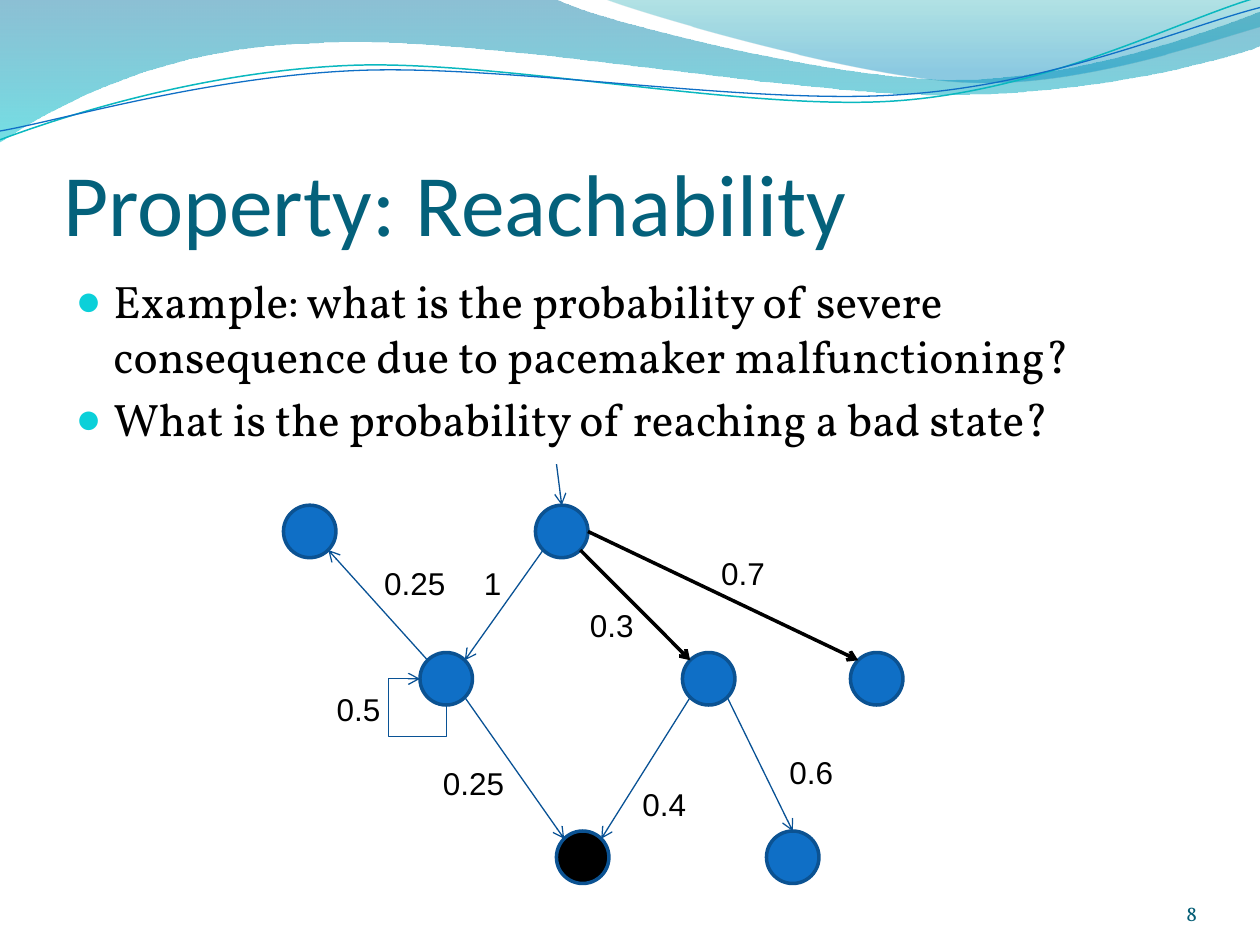
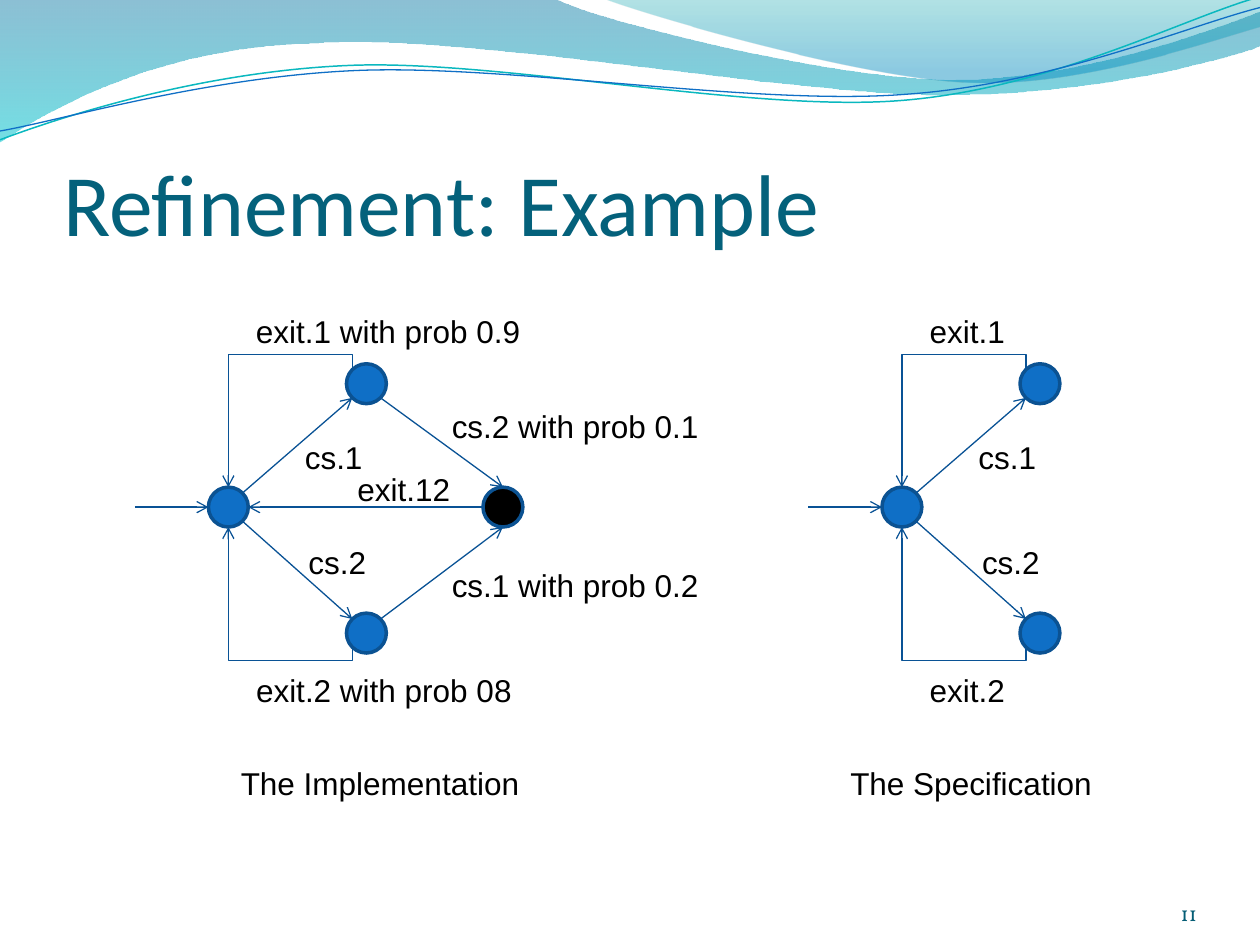
import math

from lxml import etree
from pptx import Presentation
from pptx.dml.color import RGBColor
from pptx.enum.shapes import MSO_CONNECTOR, MSO_SHAPE
from pptx.enum.text import MSO_ANCHOR, MSO_AUTO_SIZE, PP_ALIGN
from pptx.oxml.ns import qn
from pptx.util import Inches, Pt

STRAIGHT, ELBOW = MSO_CONNECTOR.STRAIGHT, MSO_CONNECTOR.ELBOW
OVAL = MSO_SHAPE.OVAL
BOTTOM = MSO_ANCHOR.BOTTOM
LEFT_ALIGNED, RIGHT_ALIGNED = PP_ALIGN.LEFT, PP_ALIGN.RIGHT
GROW = MSO_AUTO_SIZE.SHAPE_TO_FIT_TEXT

COLORS = {
    "title": "04617B", "number": "045D75", "text": "000000", "bullet": "0BD0D9",
    "state": "0F6FC6", "state edge": "0B5292", "bad": "000000",
    "arrow": "095295", "choice": "000000",
    "teal line": "0AB8BF", "blue line": "0F6FC6",
    "deep blue": "0074A1", "turquoise": "00C6CF", "sea": "00A1A9", "sky": "008BBF",
}
TITLE = {"name": "Calibri", "size": Pt(50), "color": "title"}
BODY = {"name": "Vollkorn", "size": Pt(26), "color": "text"}
NUMBER = {"name": "Vollkorn", "size": Pt(12), "color": "number"}
LABEL = {"name": "Arial", "size": Pt(18), "color": "text"}

# The slide is a grid of 120 columns by 90 rows
CELL = Inches(10) // 120

# Connection sites of a circle, counter-clockwise from the top
TOP, TOP_LEFT, LEFT, BOTTOM_LEFT, DOWN, BOTTOM_RIGHT, RIGHT, TOP_RIGHT = range(8)

# Waves in inches: a start point, then straight (2) or curved (6) segments
BROAD_WAVE = [
    (0, 0), (4.4, -0.01), (4.76, 0.17, 6.64, 0.63, 7.58, 0.63),
    (8.53, 0.63, 9.58, 0.26, 10, 0.09), (10.01, 0.36),
    (9.83, 0.44, 8.7, 0.76, 7.46, 0.75), (6.22, 0.75, 3.82, 0.28, 2.57, 0.34),
    (1.29, 0.36, 0.46, 0.83, -0.01, 1.13), (0, 0)]
RIGHT_WAVE = [
    (4.79, -0.01), (5.09, 0.11, 6.82, 0.62, 7.69, 0.65),
    (8.56, 0.69, 9.61, 0.32, 10, 0.21), (10, 0), (4.79, -0.01)]
TEAL_CURVE = [
    (0, 1.11), (0.48, 0.93, 1.58, 0.57, 2.77, 0.52),
    (3.95, 0.47, 5.93, 0.89, 7.13, 0.8), (8.33, 0.71, 9.38, 0.15, 9.98, -0.02)]
BLUE_CURVE = [
    (0, 1.04), (0.47, 0.96, 1.64, 0.61, 2.83, 0.56),
    (4.03, 0.51, 5.97, 0.84, 7.17, 0.75), (8.36, 0.67, 9.41, 0.21, 10, 0.06)]


def rgb(name):
    return RGBColor.from_string(COLORS[name])


def cells(*values):
    return [round(value * CELL) for value in values]


def add_xml(parent, tag, **attributes):
    values = {key: str(value) for key, value in attributes.items()}
    return etree.SubElement(parent, qn(tag), values)


def write(paragraph, text, style, align=LEFT_ALIGNED):
    paragraph.alignment = align
    run = paragraph.add_run()
    run.text = text
    for key, value in style.items():
        if key == "color":
            run.font.color.rgb = rgb(value)
        else:
            setattr(run.font, key, value)


def set_frame(frame, **settings):
    for key, value in settings.items():
        setattr(frame, key, value)


def place(shape, left, top, width, height):
    shape.left, shape.top, shape.width, shape.height = cells(left, top, width, height)


# ---- Wave band, kept on the master ----

def add_curve(slide, segments, close):
    """Freeform through all points, whose triples then become Bézier curves."""
    flat = [Inches(value) for segment in segments for value in segment]
    start, *rest = zip(flat[::2], flat[1::2])
    builder = slide.shapes.build_freeform(*start, scale=1.0)
    builder.add_line_segments(rest, close=close)
    curve = builder.convert_to_shape()
    curve.shadow.inherit = False
    steps = iter(list(curve.element.spPr.iter(qn("a:lnTo"))))
    for segment in segments[1:]:
        step = next(steps)
        if len(segment) == 6:
            step.tag = qn("a:cubicBezTo")
            for control in (next(steps), next(steps)):
                step.append(control[0])
                control.getparent().remove(control)
    return curve


def add_wave(slide, segments, stops):
    wave = add_curve(slide, segments, close=True)
    wave.line.fill.background()
    wave.fill.gradient()
    wave.fill.gradient_angle = 270
    for stop, (position, color, _) in zip(wave.fill.gradient_stops, stops):
        stop.position = position
        stop.color.rgb = rgb(color)
    colors = wave.element.spPr.iter(qn("a:srgbClr"))
    for color, (_, _, opacity) in zip(colors, stops):
        add_xml(color, "a:alpha", val=opacity * 1000)
    return wave


def add_thin_curve(slide, segments, color, width):
    curve = add_curve(slide, segments, close=False)
    curve.fill.background()
    curve.line.color.rgb = rgb(color)
    curve.line.width = Pt(width)
    return curve


def add_master_band(master, slide):
    band = [
        add_wave(slide, BROAD_WAVE, [(0, "deep blue", 45), (1, "turquoise", 55)]),
        add_wave(slide, RIGHT_WAVE, [(0, "sea", 30), (0.8, "sky", 45)]),
        add_thin_curve(slide, TEAL_CURVE, "teal line", 0.85),
        add_thin_curve(slide, BLUE_CURVE, "blue line", 0.75),
    ]
    for index, part in enumerate(band, start=2):
        master.shapes.element.insert(index, part.element)


# ---- Text ----

def add_slide(prs, layout_index, title, number):
    slide = prs.slides.add_slide(prs.slide_layouts[layout_index])
    heading = slide.shapes.title
    place(heading, 6, 9.24, 108, 15)
    set_frame(heading.text_frame, vertical_anchor=BOTTOM, margin_left=0,
              margin_right=0, margin_top=Inches(0.05), margin_bottom=0)
    write(heading.text_frame.paragraphs[0], title, TITLE)

    page = slide.shapes.add_textbox(*cells(104, 83.4, 10, 4.8)).text_frame
    set_frame(page, word_wrap=True, vertical_anchor=BOTTOM, margin_left=0,
              margin_right=0, margin_top=0, margin_bottom=0)
    write(page.paragraphs[0], number, NUMBER, RIGHT_ALIGNED)
    return slide


def add_bullets(slide, questions):
    body = slide.placeholders[1]
    place(body, 6, 25.4, 108, 57.6)
    for index, question in enumerate(questions):
        frame = body.text_frame
        paragraph = frame.add_paragraph() if index else frame.paragraphs[0]
        write(paragraph, question, BODY)
        properties = paragraph._p.get_or_add_pPr()
        properties.set("marL", str(Inches(0.3)))
        properties.set("indent", str(-Inches(0.3)))
        add_xml(add_xml(properties, "a:buClr"), "a:srgbClr", val=COLORS["bullet"])
        add_xml(properties, "a:buSzPct", val=95000)
        add_xml(properties, "a:buChar", char="●")


def add_label(slide, text, left, top, width, wrap=False):
    frame = slide.shapes.add_textbox(*cells(left, top, width, 4.8)).text_frame
    set_frame(frame, word_wrap=wrap, auto_size=GROW)
    write(frame.paragraphs[0], text, LABEL)


# ---- States and transitions ----

def add_state(slide, center_x, center_y, size, fill="state"):
    state = slide.shapes.add_shape(
        OVAL, *cells(center_x - size / 2, center_y - size / 2, size, size))
    state.shadow.inherit = False
    state.fill.solid()
    state.fill.fore_color.rgb = rgb(fill)
    state.line.color.rgb = rgb("state edge")
    state.line.width = Pt(2)
    return state


def site_point(state, site):
    angle = math.radians(90 + 45 * site)
    return (round(state.left + state.width / 2 * (1 + math.cos(angle))),
            round(state.top + state.height / 2 * (1 - math.sin(angle))))


def add_arrow(slide, start, end, kind=STRAIGHT, color="arrow", width=0.75):
    arrow = slide.shapes.add_connector(kind, *start, *end)
    arrow.line.color.rgb = rgb(color)
    arrow.line.width = Pt(width)
    properties = arrow.element.spPr
    add_xml(properties.find(qn("a:ln")), "a:tailEnd", type="arrow")
    add_xml(properties, "a:effectLst")
    return arrow


def add_transition(slide, source, source_site, target, target_site, **look):
    arrow = add_arrow(slide, site_point(source, source_site),
                      site_point(target, target_site), **look)
    joints = arrow.element.nvCxnSpPr.cNvCxnSpPr
    add_xml(joints, "a:stCxn", id=source.shape_id, idx=source_site)
    add_xml(joints, "a:endCxn", id=target.shape_id, idx=target_site)


def add_bent_transition(slide, start, end, turn, flips, bends):
    """Elbow arrow whose box is turned a quarter about the middle of its ends."""
    (x1, y1), (x2, y2) = start, end
    arrow = add_arrow(slide, start, end, kind=ELBOW)
    width, height = abs(y2 - y1), abs(x2 - x1)
    arrow.left, arrow.top = (x1 + x2 - width) // 2, (y1 + y2 - height) // 2
    arrow.width, arrow.height = width, height
    frame = arrow.element.spPr.find(qn("a:xfrm"))
    for axis in ("flipH", "flipV"):
        frame.set(axis, "1" if axis in flips else "0")
    frame.set("rot", str(turn * 60000))
    geometry = arrow.element.spPr.find(qn("a:prstGeom"))
    geometry.set("prst", f"bentConnector{len(bends) + 2}")
    guides = geometry.find(qn("a:avLst"))
    for index, bend in enumerate(bends, start=1):
        add_xml(guides, "a:gd", name=f"adj{index}", fmla=f"val {round(bend * 100000)}")


# ---- Diagrams ----

def draw_reachability(slide):
    upper, middle, lower, size = 50.62, 64.65, 81.65, 5
    start = add_state(slide, 53.5, upper, size)
    done = add_state(slide, 29.5, upper, size)
    looping = add_state(slide, 42.5, middle, size)
    risky = add_state(slide, 67.5, middle, size)
    safe = add_state(slide, 83.5, middle, size)
    bad = add_state(slide, 55.5, lower, size, "bad")
    recovered = add_state(slide, 75.5, lower, size)

    add_arrow(slide, cells(53, 44.2), site_point(start, TOP))
    for source, leaving, target, entering in [
            (start, BOTTOM_LEFT, looping, TOP_RIGHT),
            (looping, TOP_LEFT, done, BOTTOM_RIGHT),
            (looping, BOTTOM_RIGHT, bad, TOP_LEFT),
            (risky, BOTTOM_LEFT, bad, TOP_RIGHT),
            (risky, BOTTOM_RIGHT, recovered, TOP)]:
        add_transition(slide, source, leaving, target, entering)
    for leaving, target in [(RIGHT, safe), (BOTTOM_RIGHT, risky)]:
        add_transition(slide, start, leaving, target, TOP_LEFT, color="choice", width=2)
    add_bent_transition(slide, site_point(looping, DOWN), site_point(looping, LEFT),
                        90, ["flipH"], [-1.2, 2.2])

    for probability, left, top, width in [
            ("0.3", 55, 57.1, 6.6), ("0.7", 67.5, 52.2, 6.6), ("0.25", 41, 72.15, 8.3),
            ("0.5", 30.87, 65.15, 6.6), ("0.25", 35.4, 53.15, 8.3),
            ("0.4", 60, 74.15, 6.6), ("0.6", 74, 71.15, 6.6), ("1", 44.9, 53.15, 4.1)]:
        add_label(slide, probability, left, top, width)


def draw_automaton(slide, x, exits):
    """The part that implementation and specification share."""
    size = 3.8
    idle = add_state(slide, x, 48.3, size)
    first = add_state(slide, x + 13.15, 36.55, size)
    second = add_state(slide, x + 13.15, 60.3, size)
    add_arrow(slide, cells(x - 8.9, 48.3), site_point(idle, LEFT))
    add_transition(slide, idle, TOP_RIGHT, first, BOTTOM_LEFT)
    add_transition(slide, idle, BOTTOM_RIGHT, second, TOP_LEFT)
    add_bent_transition(slide, site_point(first, TOP_LEFT), site_point(idle, TOP),
                        270, ["flipH", "flipV"], [-0.13])
    add_bent_transition(slide, site_point(second, BOTTOM_LEFT), site_point(idle, DOWN),
                        90, ["flipH"], [-0.11])
    add_label(slide, "cs.1", x + 6.1, 41.15, 7.9)
    add_label(slide, "cs.2", x + 6.45, 51.1, 7.9)
    for (text, width), top in zip(exits, (29.15, 63.35)):
        add_label(slide, text, x + 1.45, top, width)
    return idle, first, second


def draw_refinement(slide):
    idle, first, second = draw_automaton(
        slide, 21.75, [("exit.1 with prob 0.9", 27.8), ("exit.2 with prob 08", 27)])
    bad = add_state(slide, 47.9, 48.3, 3.8, "bad")
    add_transition(slide, first, BOTTOM_RIGHT, bad, TOP)
    add_transition(slide, second, TOP_RIGHT, bad, DOWN)
    add_transition(slide, bad, LEFT, idle, RIGHT)
    add_label(slide, "cs.2 with prob 0.1", 41.85, 38.2, 26.2)
    add_label(slide, "cs.1 with prob 0.2", 41.85, 53.3, 26.2)
    add_label(slide, "exit.12", 32.85, 44.2, 11.4)

    draw_automaton(slide, 85.9, [("exit.1", 9.7), ("exit.2", 9.7)])
    add_label(slide, "The Implementation", 21.75, 72.15, 32.3, wrap=True)
    add_label(slide, "The Specification", 79.8, 72.15, 32.3, wrap=True)


def main():
    prs = Presentation()
    prs.slide_width, prs.slide_height = Inches(10), Inches(7.5)

    reachability = add_slide(prs, 1, "Property: Reachability", "8")
    add_master_band(prs.slide_master, reachability)
    add_bullets(reachability, [
        "Example: what is the probability of severe consequence due to "
        "pacemaker malfunctioning?",
        "What is the probability of reaching a bad state?"])
    draw_reachability(reachability)

    draw_refinement(add_slide(prs, 5, "Refinement: Example", "11"))
    prs.save("out.pptx")


if __name__ == "__main__":
    main()
